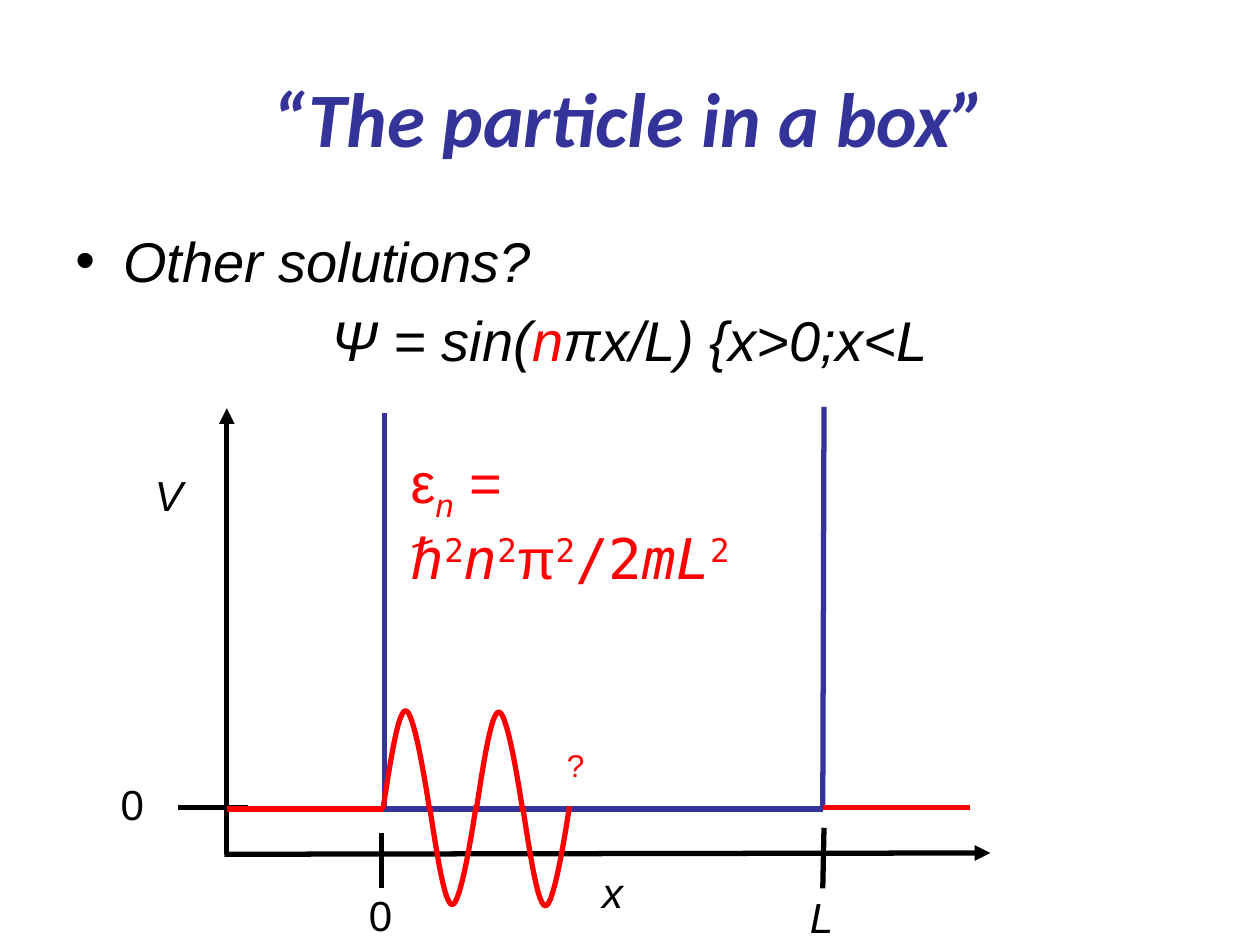
from lxml import etree
from pptx import Presentation
from pptx.dml.color import RGBColor
from pptx.enum.shapes import MSO_CONNECTOR
from pptx.enum.text import MSO_ANCHOR, MSO_AUTO_SIZE, PP_ALIGN
from pptx.oxml.ns import qn
from pptx.util import Pt

PX = 9144
STRAIGHT = MSO_CONNECTOR.STRAIGHT
LEFT, CENTER = PP_ALIGN.LEFT, PP_ALIGN.CENTER
GROW = MSO_AUTO_SIZE.SHAPE_TO_FIT_TEXT
COLORS = {"blue": "333399", "black": "000000", "red": "FF0000"}
LINE_WIDTH = 3
MONO = "DejaVu Sans Mono"
SUB, SUP = -25000, 30000
ITALIC = {"italic": True}
SQUARED = ("2", {"font": MONO, "baseline": SUP})

TITLE = [("“The particle in a box”", {"font": "Calibri", "bold": True, "italic": True})]
QUESTION = [("Other solutions?", ITALIC)]
WAVE_FUNCTION = [
    ("Ψ = sin(", ITALIC),
    ("n", {"italic": True, "color": "red"}),
    ("πx/L) {x>0;x<L", ITALIC),
]
ENERGY = [
    ("ε", {}),
    ("n", {"italic": True, "baseline": SUB}),
    (" = ", {}),
    ("ℏ", {"font": MONO}),
    SQUARED,
    ("n", {"font": MONO, "italic": True}),
    SQUARED,
    ("π", {}),
    SQUARED,
    ("/2", {"font": MONO}),
    ("mL", {"font": MONO, "italic": True}),
    SQUARED,
]
LINES = [
    ((305, 328), (305, 641), "blue", False),
    ((304, 642), (653, 642), "blue", False),
    ((653, 641), (654, 323), "blue", False),
    ((180, 678), (180, 324), "black", True),
    ((178, 678), (786, 677), "black", True),
    ((197, 641), (141, 641), "black", False),
    ((303, 661), (303, 705), "black", False),
    ((654, 657), (653, 705), "black", False),
    ((180, 642), (305, 642), "red", False),
    ((653, 641), (770, 641), "red", False),
]
LABELS = [
    ("V", (113, 368, 42, 50), 24, "black", True),
    ("x", (468, 683, 37, 50), 24, "black", True),
    ("0", (86, 613, 39, 50), 24, "black", False),
    ("0", (283, 701, 39, 50), 24, "black", False),
    ("L", (633, 703, 39, 50), 24, "black", True),
    ("?", (440, 587, 34, 40), 18, "red", False),
]
WAVE_START, HALF_WAVE = 304, 37
HALF_WAVE_STARTS = [(642, -1), (640, 1), (643, -1), (641, 1)]
HALF_WAVE_CURVES = [
    ((0, 0), (6, 39), (12, 78), (18, 78)),
    ((18, 78), (25, 78), (35, 12), (37, -1)),
]
CURVE_STEPS = 12


def rgb(name):
    return RGBColor.from_string(COLORS[name])


def add_text_box(slide, box, wrap=True):
    frame = slide.shapes.add_textbox(*(value * PX for value in box)).text_frame
    frame.word_wrap = wrap
    return frame


def write_runs(paragraph, runs, size, color="black", align=LEFT):
    paragraph.alignment = align
    for text, style in runs:
        run = paragraph.add_run()
        run.text = text
        font = run.font
        font.name = style.get("font", "Arial")
        font.size = Pt(size)
        font.bold = style.get("bold", False)
        font.italic = style.get("italic", False)
        font.color.rgb = rgb(style.get("color", color))
        if "baseline" in style:
            run._r.get_or_add_rPr().set("baseline", str(style["baseline"]))


def indent(paragraph, bullet=None):
    paragraph.space_before = Pt(6.4)
    properties = paragraph._p.get_or_add_pPr()
    properties.set("marL", str(38 * PX))
    properties.set("indent", str(-38 * PX))
    if bullet:
        etree.SubElement(properties, qn("a:buFont")).set("typeface", "Arial")
        etree.SubElement(properties, qn("a:buChar")).set("char", bullet)
    else:
        etree.SubElement(properties, qn("a:buNone"))


def add_line(slide, start, end, color, arrow):
    points = [value * PX for value in start + end]
    connector = slide.shapes.add_connector(STRAIGHT, *points)
    connector.line.color.rgb = rgb(color)
    connector.line.width = Pt(LINE_WIDTH)
    if arrow:
        etree.SubElement(connector.line._get_or_add_ln(), qn("a:tailEnd")).set("type", "triangle")
    etree.SubElement(connector._element.spPr, qn("a:effectLst"))


def curve_point(curve, t):
    weights = ((1 - t) ** 3, 3 * t * (1 - t) ** 2, 3 * t ** 2 * (1 - t), t ** 3)
    return [sum(w * point[axis] for w, point in zip(weights, curve)) for axis in (0, 1)]


def add_half_wave(slide, left, base, direction):
    points = []
    for curve in HALF_WAVE_CURVES:
        for step in range(1, CURVE_STEPS + 1):
            x, y = curve_point(curve, step / CURVE_STEPS)
            points.append((round((left + x) * PX), round((base + direction * y) * PX)))
    builder = slide.shapes.build_freeform(left * PX, base * PX)
    builder.add_line_segments(points, close=False)
    shape = builder.convert_to_shape()
    shape.shadow.inherit = False
    shape.fill.background()
    shape.line.color.rgb = rgb("red")
    shape.line.width = Pt(LINE_WIDTH)


def main():
    presentation = Presentation()
    presentation.slide_width, presentation.slide_height = 1000 * PX, 750 * PX
    slide = presentation.slides.add_slide(presentation.slide_layouts[6])

    title = add_text_box(slide, (50, 30, 900, 125))
    title.vertical_anchor = MSO_ANCHOR.MIDDLE
    write_runs(title.paragraphs[0], TITLE, 44, "blue", CENTER)

    body = add_text_box(slide, (50, 175, 900, 495))
    question, formula = body.paragraphs[0], body.add_paragraph()
    write_runs(question, QUESTION, 32)
    indent(question, "•")
    write_runs(formula, WAVE_FUNCTION, 32, align=CENTER)
    indent(formula)

    for line in LINES:
        add_line(slide, *line)
    for index, (base, direction) in enumerate(HALF_WAVE_STARTS):
        add_half_wave(slide, WAVE_START + index * HALF_WAVE, base, direction)

    for text, box, size, color, italic in LABELS:
        label = add_text_box(slide, box, wrap=False)
        label.auto_size = GROW
        write_runs(label.paragraphs[0], [(text, {"italic": italic})], size, color)

    energy = add_text_box(slide, (316, 350, 341, 63))
    energy.auto_size = GROW
    write_runs(energy.paragraphs[0], ENERGY, 32, "red")

    presentation.save("out.pptx")


if __name__ == "__main__":
    main()
